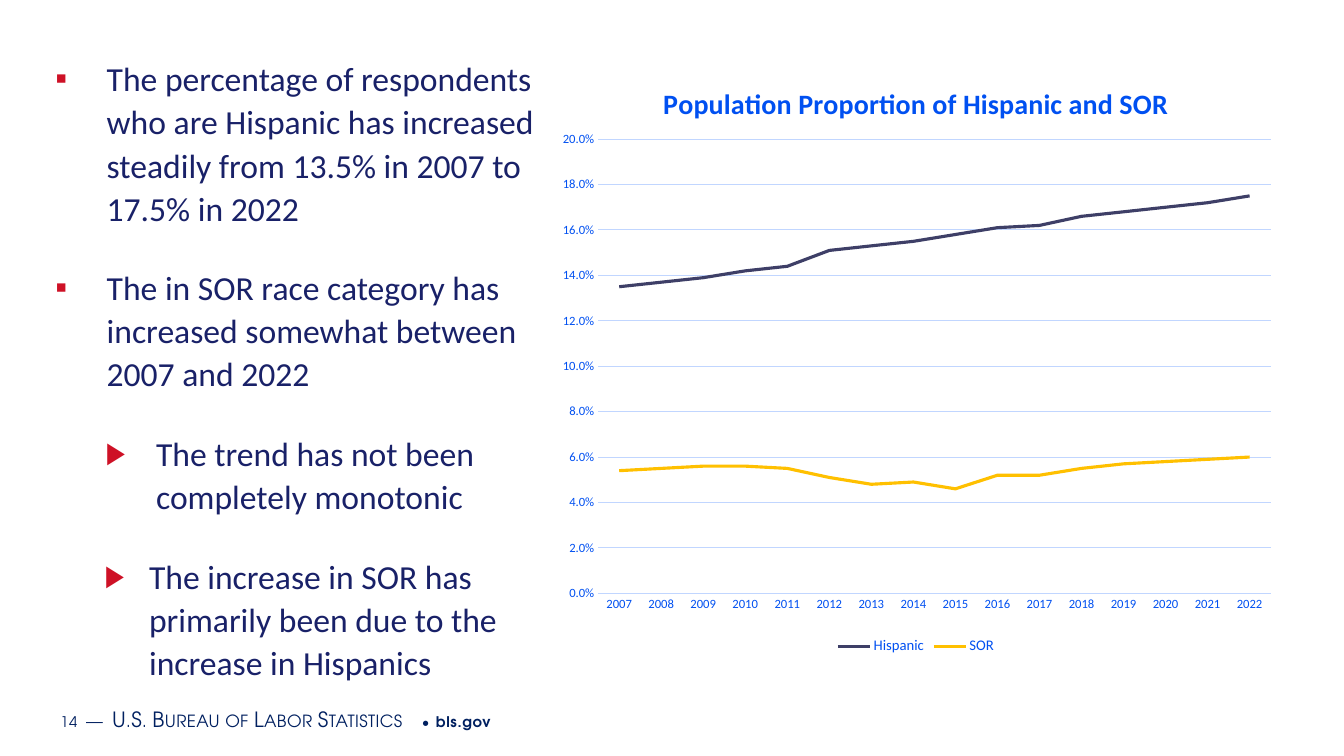
from lxml.etree import SubElement as Sub
from pptx import Presentation
from pptx.chart.data import CategoryChartData as Data
from pptx.dml.color import RGBColor as RGB
from pptx.enum.chart import XL_CHART_TYPE as Kind, XL_LEGEND_POSITION as Place, XL_TICK_MARK as Tick
from pptx.enum.text import MSO_ANCHOR as Anchor
from pptx.oxml.ns import qn
from pptx.util import Inches, Pt

HUES = {
    "navy": "192168", "foot": "002060", "red": "CE1126", "blue": "0050F1",
    "grid": "C1D6FF", "plum": "3E3F67", "gold": "FFC000",
}
BODY = "Calibri"
FOOT = "TeX Gyre Adventor"

POINTS = [
    ("The percentage of respondents who are Hispanic has increased steadily "
     "from 13.5% in 2007 to 17.5% in 2022", 0, 0.51, 0.51),
    ("The in SOR race category has increased somewhat between 2007 and 2022", 0, 0.51, 0.51),
    ("The trend has not been completely monotonic", 1, 1, 0.5),
    ("The increase in SOR has primarily been due to the increase in Hispanics", 1, 0.93, 0.44),
]
MARKS = [("▪", 100), ("▶", 90)]

SERIES = {
    "Hispanic": ("plum", [13.5, 13.7, 13.9, 14.2, 14.4, 15.1, 15.3, 15.5,
                          15.8, 16.1, 16.2, 16.6, 16.8, 17, 17.2, 17.5]),
    "SOR": ("gold", [5.4, 5.5, 5.6, 5.6, 5.5, 5.1, 4.8, 4.9,
                     4.6, 5.2, 5.2, 5.5, 5.7, 5.8, 5.9, 6]),
}


def style(font, size, hue, face=BODY, bold=False):
    font.size, font.name, font.bold = Pt(size), face, bold
    font.color.rgb = RGB.from_string(HUES[hue])


def write(para, text, size=24, hue="navy", face=BODY, bold=False, gap=0, small=False):
    run = para.add_run()
    run.text = text
    style(run.font, size, hue, face, bold)
    props = run.font._element
    if gap:
        props.set("spc", str(round(gap * 100)))
    if small:
        props.set("cap", "small")


def add_box(slide, left, top, width, height):
    frame = slide.shapes.add_textbox(*map(Inches, (left, top, width, height))).text_frame
    frame.word_wrap = True
    return frame


def add_mark(para, level, left, hang):
    sign, scale = MARKS[level]
    props = para._p.get_or_add_pPr()
    props.set("marL", str(Inches(left)))
    props.set("indent", str(-Inches(hang)))
    Sub(Sub(props, qn("a:buClr")), qn("a:srgbClr"), val=HUES["red"])
    Sub(props, qn("a:buSzPct"), val=str(scale * 1000))
    Sub(props, qn("a:buFont"), typeface="Arial")
    Sub(props, qn("a:buChar"), char=sign)


def add_points(slide):
    frame = add_box(slide, 0.45, 0.5, 4.95, 6.04)
    for i, (text, level, left, hang) in enumerate(POINTS):
        para = frame.add_paragraph() if i else frame.paragraphs[0]
        add_mark(para, level, left, hang)
        para.level = level
        para.line_spacing = 1.07
        para.space_after = Pt(26)
        write(para, text)


def add_foot(slide):
    frame = add_box(slide, 0.53, 6.93, 8.47, 0.4)
    frame.vertical_anchor = Anchor.MIDDLE
    frame.margin_left = frame.margin_right = Inches(0.07)
    frame.margin_top = frame.margin_bottom = Inches(0.04)
    para = frame.paragraphs[0]
    for text, size, gap, small, bold in [
        ("14", 10.5, 0.5, False, False),
        ("\u2004", 16, 0.5, False, False),
        ("—", 15, 0.3, True, False),
        ("\u2004", 16, 0.5, False, False),
        ("U.S. Bureau of Labor Statistics", 15, 0.3, True, False),
        ("\u2004•\u2004", 10.5, 0.5, False, False),
        ("bls.gov", 10.5, 0.5, False, True),
    ]:
        write(para, text, size=size, hue="foot", face=FOOT, bold=bold, gap=gap, small=small)


def draw(line, hue, width):
    line.color.rgb = RGB.from_string(HUES[hue])
    line.width = Pt(width)


def fix_plot(chart, **sizes):
    area = chart._chartSpace.chart.plotArea
    spot = area.find(qn("c:layout"))
    if spot is None:
        spot = Sub(area, qn("c:layout"))
        area.insert(0, spot)
    form = Sub(spot, qn("c:manualLayout"))
    Sub(form, qn("c:layoutTarget"), val="inner")
    for key in ("xMode", "yMode"):
        Sub(form, qn(f"c:{key}"), val="edge")
    for key, size in sizes.items():
        Sub(form, qn(f"c:{key}"), val=str(size))


def add_trend(slide):
    data = Data(number_format="0.0%")
    data.categories = [str(year) for year in range(2007, 2023)]
    for name, (_, rates) in SERIES.items():
        data.add_series(name, [round(rate / 100, 3) for rate in rates])
    spot = map(Inches, (5.42, 0.61, 7.33, 5.93))
    chart = slide.shapes.add_chart(Kind.LINE, *spot, data).chart
    style(chart.font, 10, "foot")
    chart.has_title = True
    write(chart.chart_title.text_frame.paragraphs[0], "Population Proportion of Hispanic and SOR",
          size=20, hue="blue", bold=True)
    chart.chart_title.include_in_layout = False
    chart.has_legend = True
    chart.legend.position = Place.BOTTOM
    chart.legend.include_in_layout = False
    style(chart.legend.font, 10.5, "blue")
    for axis in (chart.category_axis, chart.value_axis):
        axis.major_tick_mark = axis.minor_tick_mark = Tick.NONE
        style(axis.tick_labels.font, 9, "blue")
    draw(chart.category_axis.format.line, "grid", 0.75)
    rate = chart.value_axis
    rate.minimum_scale, rate.maximum_scale, rate.major_unit = 0, 0.2, 0.02
    rate.format.line.fill.background()
    draw(rate.major_gridlines.format.line, "grid", 0.75)
    rate.tick_labels.number_format = "0.0%"
    rate.tick_labels.number_format_is_linked = False
    chart.plots[0].vary_by_categories = False
    for item in chart.plots[0].series:
        item.smooth = False
        draw(item.format.line, SERIES[item.name][0], 2.25)
    fix_plot(chart, x=0.07, y=0.13, w=0.91, h=0.76)


def main():
    deck = Presentation()
    deck.slide_width, deck.slide_height = Inches(13.33), Inches(7.5)
    slide = deck.slides.add_slide(deck.slide_layouts[6])
    add_foot(slide)
    add_points(slide)
    add_trend(slide)
    deck.save("out.pptx")


if __name__ == "__main__":
    main()
